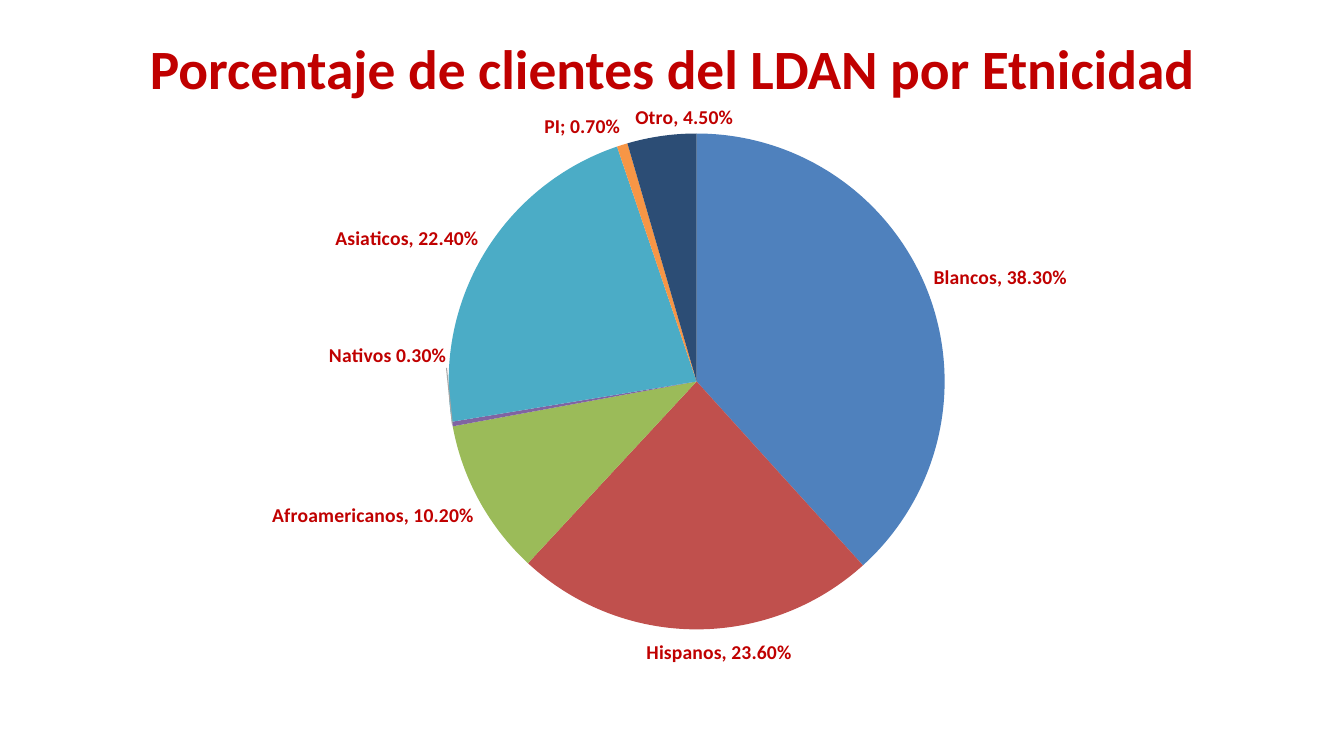
"""Build a slide with a pie chart of clients by ethnicity."""
from lxml.etree import SubElement
from pptx import Presentation
from pptx.chart.data import CategoryChartData
from pptx.dml.color import RGBColor
from pptx.enum.chart import XL_CHART_TYPE, XL_LABEL_POSITION
from pptx.enum.text import MSO_ANCHOR, PP_ALIGN
from pptx.oxml import parse_xml
from pptx.oxml.ns import nsdecls, qn
from pptx.util import Inches, Pt

FONT = "Calibri"
COLORS = {
    "text": "C00000", "leader": "A6A6A6", "White": "4F81BD",
    "Hispanic": "C0504D", "Black ": "9BBB59", "Native": "8064A2",
    "Asian": "4BACC6", "PI": "F79646", "Other": "2C4D75",
}
TITLE = "Porcentaje de clientes del LDAN por Etnicidad"
SLICES = [
    ("White", 0.383, "Blancos, 38.30%", None),
    ("Hispanic", 0.236, "Hispanos, 23.60%", (0.02, 0.01)),
    ("Black ", 0.102, "Afroamericanos, 10.20%", None),
    ("Native", 0.003, "Nativos 0.30%", (0, -0.14)),
    ("Asian", 0.224, "Asiaticos, 22.40%", None),
    ("PI", 0.007, None, None),
    ("Other", 0.045, "Otro, 4.50%", (0.06, 0)),
]
TITLE_BOX = (0.67, 0.3, 12, 0.73)
CHART_BOX = (0.61, 0.9, 12, 5.77)
PIE_AREA = {"x": 0.32, "y": 0.07, "w": 0.41, "h": 0.86}


def style_font(font, size):
    font.name, font.size, font.bold = FONT, Pt(size), True
    font.color.rgb = RGBColor.from_string(COLORS["text"])


def write(tf, text, size, align=PP_ALIGN.CENTER):
    p = tf.paragraphs[0]
    p.alignment = align
    r = p.add_run()
    r.text = text
    style_font(r.font, size)


def make_layout(**values):
    layout = parse_xml(f"<c:layout {nsdecls('c')}/>")
    manual = SubElement(layout, qn("c:manualLayout"))
    for name, value in values.items():
        SubElement(manual, qn(f"c:{name}")).set("val", str(value))
    return layout


def add_title(slide):
    tf = slide.shapes.add_textbox(*map(Inches, TITLE_BOX)).text_frame
    tf.word_wrap = True
    tf.vertical_anchor = MSO_ANCHOR.MIDDLE
    write(tf, TITLE, 39.6)


def add_pie(slide):
    data = CategoryChartData(number_format="0.00%")
    data.categories = [name for name, *_ in SLICES]
    data.add_series("Series 1", [value for _, value, *_ in SLICES])
    chart = slide.shapes.add_chart(
        XL_CHART_TYPE.PIE, *map(Inches, CHART_BOX), data).chart
    chart.has_legend = chart.has_title = False
    chart.font.name, chart.font.size = FONT, Pt(10)
    plot = chart.plots[0]
    plot.vary_by_categories = True
    series = plot.series[0]

    labels = series.data_labels
    labels.show_category_name = labels.show_value = True
    labels.number_format, labels.number_format_is_linked = "0.00%", False
    labels.position = XL_LABEL_POSITION.OUTSIDE_END
    style_font(labels.font, 14)

    for i, (name, _, text, shift) in enumerate(SLICES):
        point = series.points[i]
        point.format.fill.solid()
        point.format.fill.fore_color.rgb = RGBColor.from_string(COLORS[name])
        if text:
            label = point.data_label
            write(label.text_frame, text, 14)
            label.position = XL_LABEL_POSITION.OUTSIDE_END
        if shift:
            index = chart.element.xpath(f".//c:dLbl/c:idx[@val='{i}']")[0]
            index.addnext(make_layout(x=shift[0], y=shift[1]))

    chart.element.find(".//" + qn("c:dLbls")).append(parse_xml(
        f"<c:leaderLines {nsdecls('c', 'a')}><c:spPr><a:ln w='9525'>"
        f"<a:solidFill><a:srgbClr val='{COLORS['leader']}'/></a:solidFill>"
        "</a:ln></c:spPr></c:leaderLines>"))

    area = chart.element.find(".//" + qn("c:plotArea"))
    for old in area.findall(qn("c:layout")):
        area.remove(old)
    area.insert(0, make_layout(
        layoutTarget="inner", xMode="edge", yMode="edge", **PIE_AREA))


def main():
    prs = Presentation()
    prs.slide_width, prs.slide_height = Inches(13.33), Inches(7.5)
    slide = prs.slides.add_slide(prs.slide_layouts[6])
    add_title(slide)
    add_pie(slide)
    prs.save("out.pptx")


if __name__ == "__main__":
    main()
